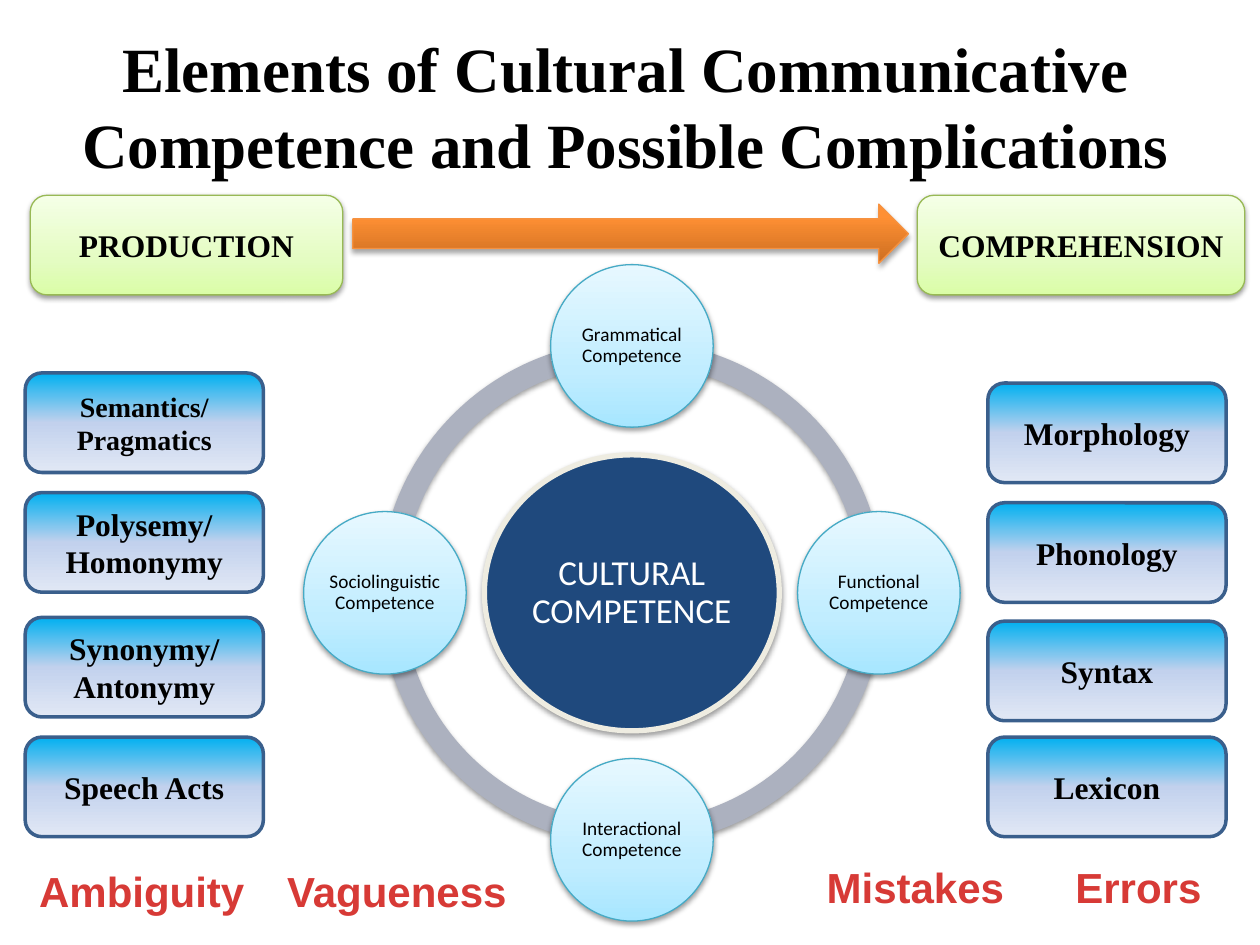
from math import cos, radians, sin

from lxml.etree import SubElement
from pptx import Presentation
from pptx.dml.color import RGBColor
from pptx.enum.shapes import MSO_SHAPE as Shape
from pptx.enum.text import MSO_ANCHOR as Anchor, MSO_AUTO_SIZE as AutoSize, PP_ALIGN as Align
from pptx.oxml.ns import qn
from pptx.util import Inches, Pt

# Content
TITLE = "Elements of Cultural Communicative Competence and Possible Complications"
HUB = "CULTURAL COMPETENCE"
COMPETENCES = [  # clockwise from the top
    "Grammatical Competence",
    "Functional Competence",
    "Interactional Competence",
    "Sociolinguistic Competence",
]
STAGES = [("PRODUCTION", 0.24, 2.48), ("COMPREHENSION", 7.28, 2.6)]  # text, left, width
COLUMNS = {  # left edge: (top, size, lines)
    0.2: [
        (2.96, 16, ["Semantics/", "Pragmatics"]),
        (3.91, 18, ["Polysemy/ Homonymy"]),
        (4.9, 18, ["Synonymy/", "Antonymy"]),
        (5.85, 18, ["Speech Acts"]),
    ],
    7.84: [
        (3.04, 18, ["Morphology"]),
        (3.99, 18, ["Phonology"]),
        (4.93, 18, ["Syntax"]),
        (5.85, 18, ["Lexicon"]),
    ],
}
COMPLICATIONS = [  # text, left, top, width
    ("Ambiguity", 0.2, 6.82, 1.85),
    ("Vagueness", 2.17, 6.82, 1.96),
    ("Mistakes", 6.45, 6.79, 1.63),
    ("Errors", 8.43, 6.79, 1.21),
]

# Style
BLACK = RGBColor(0x00, 0x00, 0x00)
WHITE = RGBColor(0xFF, 0xFF, 0xFF)
RED = RGBColor(0xD7, 0x3A, 0x36)
NAVY = RGBColor(0x1F, 0x49, 0x7D)
CREAM = RGBColor(0xEE, 0xEC, 0xE1)
RING_GREY = RGBColor(0xAC, 0xB1, 0xBF)
TEAL = RGBColor(0x46, 0xAA, 0xC5)
STEEL = RGBColor(0x3A, 0x5F, 0x8C)
OLIVE = RGBColor(0x98, 0xB9, 0x55)
ORANGE = RGBColor(0xF6, 0x92, 0x40)

UP, DOWN = 270, 90  # clockwise gradient directions
SKY_FADE = (UP, [(0, "A7E6FF"), (35, "C1EDFF"), (100, "E7F8FF")])
BLUE_FADE = (DOWN, [(0, "00B0F0"), (50, "C2D1ED"), (100, "E1E8F5")])
GREEN_FADE = (UP, [(0, "DAFDA7"), (35, "E4FCC2"), (100, "F5FFE7")])
ORANGE_FADE = (UP, [(0, "CC6E20"), (80, "FF9034"), (100, "FF9136")])

SERIF, SANS, LABEL = "Times New Roman", "Calibri", "Arial"

# Geometry
CENTER_X, CENTER_Y = 5.015, 4.705
RING, ORBIT, CIRCLE = 4.01, 1.96, 1.29
HUB_WIDTH, HUB_HEIGHT = 2.34, 2.19
BOX_WIDTH, BOX_HEIGHT = 1.89, 0.79


def set_gradient(shape, fade):
    angle, stops = fade
    shape.fill.gradient()
    shape.fill.gradient_angle = 360 - angle
    stop_list = shape.element.spPr.find(".//" + qn("a:gsLst"))
    for stop in list(stop_list):
        stop_list.remove(stop)
    for position, color in stops:
        stop = SubElement(stop_list, qn("a:gs"), pos=str(position * 1000))
        SubElement(stop, qn("a:srgbClr"), val=color)


def add_shadow(shape, opacity, distance):
    effects = shape.element.spPr.find(qn("a:effectLst"))
    shadow = SubElement(effects, qn("a:outerShdw"), blurRad=str(Pt(3.1)),
                        dist=str(Pt(distance)), dir="5400000", rotWithShape="0")
    color = SubElement(shadow, qn("a:srgbClr"), val="000000")
    SubElement(color, qn("a:alpha"), val=str(opacity * 1000))


def add_figure(page, kind, place, fill, line=None, weight=0.75, shadow=None):
    shape = page.shapes.add_shape(kind, *map(Inches, place))
    shape.shadow.inherit = False
    if isinstance(fill, RGBColor):
        shape.fill.solid()
        shape.fill.fore_color.rgb = fill
    else:
        set_gradient(shape, fill)
    if line is None:
        shape.line.fill.background()
    else:
        shape.line.color.rgb = line
        shape.line.width = Pt(weight)
    if shadow:
        add_shadow(shape, *shadow)
    return shape


def write(shape, lines, font, size, color, bold=True, spacing=None, inset=None):
    frame = shape.text_frame
    frame.word_wrap = True
    frame.vertical_anchor = Anchor.MIDDLE
    if inset is not None:
        frame.margin_left = frame.margin_right = Inches(inset)
        frame.margin_top = frame.margin_bottom = Inches(inset)
    for index, line in enumerate(lines):
        para = frame.add_paragraph() if index else frame.paragraphs[0]
        para.alignment = Align.CENTER
        if spacing:
            para.line_spacing = spacing
        span = para.add_run()
        span.text = line
        span.font.name, span.font.size, span.font.bold = font, Pt(size), bold
        span.font.color.rgb = color
    return frame


def centered(x, y, width, height):
    return x - width / 2, y - height / 2, width, height


def main():
    deck = Presentation()
    deck.slide_width, deck.slide_height = Inches(10), Inches(7.5)
    page = deck.slides.add_slide(deck.slide_layouts[5])
    soft = (38, 1.6)

    # Title
    title = page.shapes.title
    title.left, title.top, title.width, title.height = map(Inches, (0.2, 0.21, 9.53, 1.25))
    write(title, [TITLE], SERIF, 36, BLACK).auto_size = AutoSize.NONE

    # Ring of four quarter arcs; 54 adjustment units make 90 degrees
    for quarter in range(4):
        arc = add_figure(page, Shape.BLOCK_ARC, centered(CENTER_X, CENTER_Y, RING, RING),
                         RING_GREY, shadow=soft)
        arc.adjustments[0] = quarter * 54
        arc.adjustments[1] = (quarter + 1) % 4 * 54
        arc.adjustments[2] = 0.046

    # Hub and the competences around it
    hub = add_figure(page, Shape.OVAL, centered(CENTER_X, CENTER_Y, HUB_WIDTH, HUB_HEIGHT),
                     NAVY, CREAM, 3, soft)
    write(hub, [HUB], SANS, 20, WHITE, False, 0.9, 0.03)
    for index, name in enumerate(COMPETENCES):
        angle = radians(index * 360 / len(COMPETENCES) - 90)
        x, y = CENTER_X + ORBIT * cos(angle), CENTER_Y + ORBIT * sin(angle)
        circle = add_figure(page, Shape.OVAL, centered(x, y, CIRCLE, CIRCLE),
                            SKY_FADE, TEAL, shadow=soft)
        # No side insets, so that the longest word fits on one line
        write(circle, [name], SANS, 11, BLACK, False, 0.9, 0)

    # Production to comprehension
    for name, left, width in STAGES:
        stage = add_figure(page, Shape.ROUNDED_RECTANGLE, (left, 1.55, width, BOX_HEIGHT),
                           GREEN_FADE, OLIVE, shadow=soft)
        write(stage, [name], SERIF, 18, BLACK)
    add_figure(page, Shape.RIGHT_ARROW, (2.8, 1.62, 4.41, 0.47), ORANGE_FADE, ORANGE,
               shadow=(35, 1.8))

    # Side columns
    for left, boxes in COLUMNS.items():
        for top, size, lines in boxes:
            box = add_figure(page, Shape.ROUNDED_RECTANGLE, (left, top, BOX_WIDTH, BOX_HEIGHT),
                             BLUE_FADE, STEEL, 2)
            write(box, lines, SERIF, size, BLACK)

    # Complications
    for name, left, top, width in COMPLICATIONS:
        label = page.shapes.add_textbox(*map(Inches, (left, top, width, 0.5)))
        frame = write(label, [name], LABEL, 24, RED)
        frame.vertical_anchor = Anchor.TOP
        frame.word_wrap = False
        frame.auto_size = AutoSize.SHAPE_TO_FIT_TEXT

    deck.save("out.pptx")


if __name__ == "__main__":
    main()
